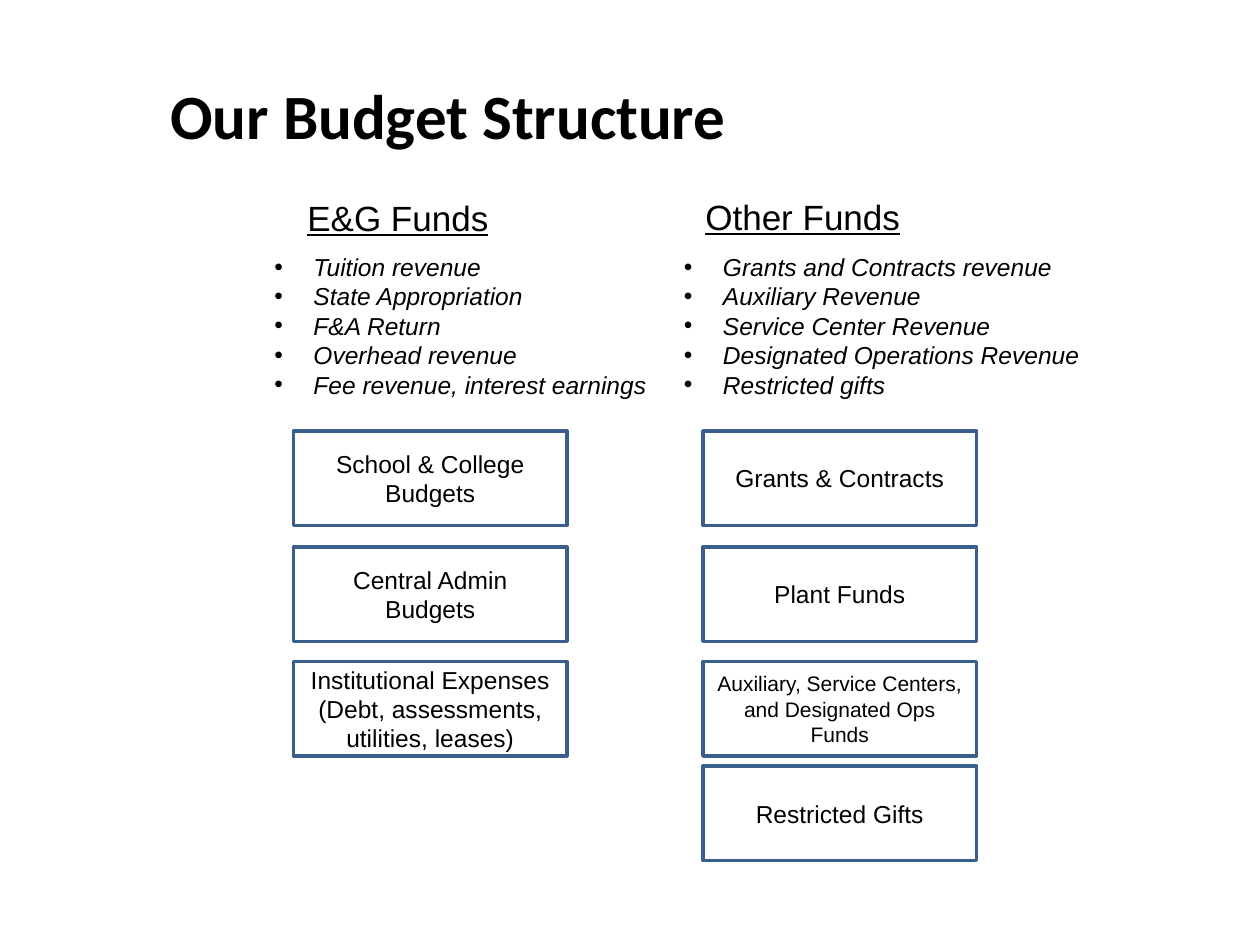
from dataclasses import dataclass

from lxml import etree
from pptx import Presentation
from pptx.dml.color import RGBColor
from pptx.enum.shapes import MSO_SHAPE
from pptx.enum.text import MSO_ANCHOR, MSO_AUTO_SIZE, PP_ALIGN
from pptx.oxml.ns import qn
from pptx.util import Emu, Pt

PX = 9144  # 100 px to the inch
RECT = MSO_SHAPE.RECTANGLE
MIDDLE = MSO_ANCHOR.MIDDLE
LEFT, CENTER = PP_ALIGN.LEFT, PP_ALIGN.CENTER
FIT_SHAPE = MSO_AUTO_SIZE.SHAPE_TO_FIT_TEXT
NO_FIT = MSO_AUTO_SIZE.NONE
TITLE_ONLY = 5


@dataclass(frozen=True)
class Theme:
    text: RGBColor = RGBColor(0x00, 0x00, 0x00)
    border: RGBColor = RGBColor(0x3A, 0x5F, 0x8C)
    title_font: str = "Calibri"
    body_font: str = "Arial"
    title_size: int = 36
    heading_size: int = 20
    body_size: int = 14
    small_size: int = 12
    border_width: int = 2


THEME = Theme()

# Offsets inside a column
HEADING_H = 44
BULLETS_TOP, BULLETS_H, INDENT = 45, 128, 31
BOX_LEFT, BOX_W, BOX_H = 25, 217, 75
BOX_TOPS = (192, 284, 375, 458)

# Each box holds its paragraphs and its type size
COLUMNS = [
    dict(
        box=(208, 150, 317),
        heading=("E&G Funds", 26, 1, 165),
        sources=["Tuition revenue", "State Appropriation", "F&A Return",
                 "Overhead revenue", "Fee revenue, interest earnings"],
        budgets=[
            (["School & College Budgets"], THEME.body_size),
            (["Central Admin", "Budgets"], THEME.body_size),
            (["Institutional Expenses",
              "(Debt, assessments, utilities, leases)"], THEME.body_size),
        ],
    ),
    dict(
        box=(533, 150, 336),
        heading=("Other Funds", 17, 0, 176),
        sources=["Grants and Contracts revenue", "Auxiliary Revenue",
                 "Service Center Revenue", "Designated Operations Revenue",
                 "Restricted gifts"],
        budgets=[
            (["Grants & Contracts"], THEME.body_size),
            (["Plant Funds"], THEME.body_size),
            (["Auxiliary, Service Centers, and Designated Ops Funds"],
             THEME.small_size),
            (["Restricted Gifts"], THEME.body_size),
        ],
    ),
]


def px(*lengths):
    return [Emu(n * PX) for n in lengths]


def write(tf, lines, size, name=THEME.body_font, align=LEFT, **style):
    """Fill a text frame with one paragraph per line."""
    for i, line in enumerate(lines):
        p = tf.paragraphs[0] if i == 0 else tf.add_paragraph()
        p.text = line
        p.alignment = align
        p.font.name = name
        p.font.size = Pt(size)
        p.font.color.rgb = THEME.text
        for key, value in style.items():
            setattr(p.font, key, value)


def add_bullets(tf):
    for p in tf.paragraphs:
        pPr = p._p.get_or_add_pPr()
        pPr.set("marL", str(INDENT * PX))
        pPr.set("indent", str(-INDENT * PX))
        for mark in (etree.Element(qn("a:buFont"), typeface=THEME.body_font),
                     etree.Element(qn("a:buChar"), char="•")):
            pPr.insert_element_before(mark, "a:tabLst", "a:defRPr", "a:extLst")


def add_label(s, box, lines, size, **style):
    tf = s.shapes.add_textbox(*px(*box)).text_frame
    tf.word_wrap = False
    tf.auto_size = FIT_SHAPE
    write(tf, lines, size, **style)
    return tf


def add_budget_box(s, box, lines, size):
    sp = s.shapes.add_shape(RECT, *px(*box))
    sp.shadow.inherit = False
    sp.fill.background()
    sp.line.color.rgb = THEME.border
    sp.line.width = Pt(THEME.border_width)
    tf = sp.text_frame
    tf.word_wrap = True
    tf.vertical_anchor = MIDDLE
    write(tf, lines, size, align=CENTER)


def place_title(s, box, text):
    sp = s.shapes.title
    sp.left, sp.top, sp.width, sp.height = px(*box)
    tf = sp.text_frame
    tf.word_wrap = True
    tf.auto_size = NO_FIT
    tf.vertical_anchor = MIDDLE
    write(tf, [text], THEME.title_size, name=THEME.title_font, bold=True)


def add_fund_column(s, box, heading, sources, budgets):
    x, y, w = box

    # Heading
    text, dx, dy, heading_w = heading
    add_label(s, (x + dx, y + dy, heading_w, HEADING_H), [text],
              THEME.heading_size, underline=True)

    # Revenue sources
    tf = add_label(s, (x, y + BULLETS_TOP, w, BULLETS_H), sources,
                   THEME.body_size, italic=True)
    add_bullets(tf)

    # Budget boxes
    for top, (lines, size) in zip(BOX_TOPS, budgets):
        add_budget_box(s, (x + BOX_LEFT, y + top, BOX_W, BOX_H), lines, size)


def main():
    prs = Presentation()
    prs.slide_width, prs.slide_height = px(1000, 750)
    s = prs.slides.add_slide(prs.slide_layouts[TITLE_ONLY])
    place_title(s, (125, 46, 767, 89), "Our Budget Structure")
    for column in COLUMNS:
        add_fund_column(s, **column)
    prs.save("out.pptx")


if __name__ == "__main__":
    main()
